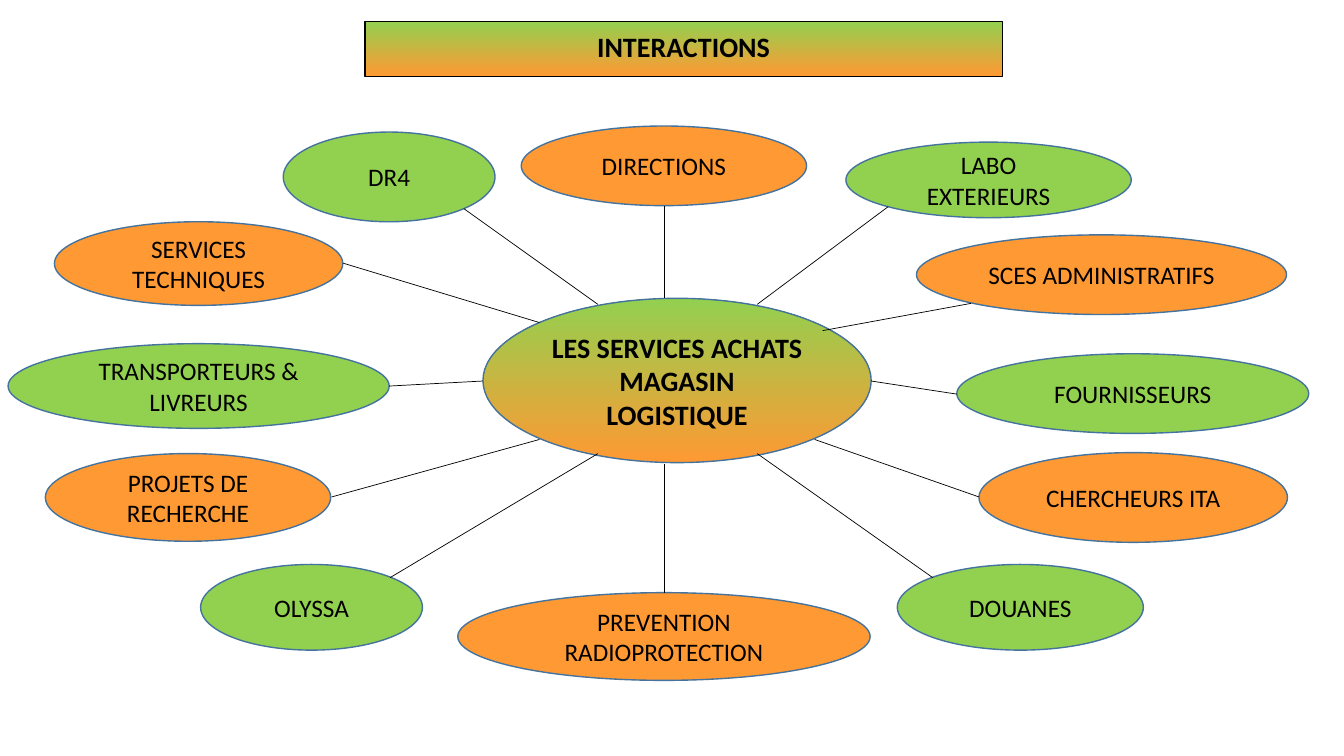
from pptx import Presentation
from pptx.dml.color import RGBColor
from pptx.enum.shapes import MSO_CONNECTOR, MSO_SHAPE
from pptx.enum.text import MSO_ANCHOR, PP_ALIGN
from pptx.util import Inches, Pt

OVAL, RECT = MSO_SHAPE.OVAL, MSO_SHAPE.RECTANGLE
STRAIGHT = MSO_CONNECTOR.STRAIGHT
MIDDLE, CENTER = MSO_ANCHOR.MIDDLE, PP_ALIGN.CENTER

FONT = "Calibri"
ORANGE, GREEN, BLUE, BLACK = "FF9933", "92D050", "43739E", "000000"
BLEND = (ORANGE, GREEN)

TITLE = ("INTERACTIONS", (3.62, 0.21, 6.32, 0.55))
HUB = ("LES SERVICES ACHATS MAGASIN LOGISTIQUE", (4.79, 2.96, 3.85, 1.63))
PARTNERS = [
    ("SERVICES TECHNIQUES", ORANGE, (0.54, 2.2, 2.86, 0.83), (3.4, 2.61), (5.35, 3.2)),
    ("SCES ADMINISTRATIFS", ORANGE, (9.09, 2.33, 3.67, 0.79), (9.63, 3.01), (8.16, 3.28)),
    ("DIRECTIONS", ORANGE, (5.17, 1.25, 2.83, 0.79), (6.59, 2.04), (6.59, 2.96)),
    ("CHERCHEURS ITA", ORANGE, (9.71, 4.49, 3.06, 0.89), (9.71, 4.93), (8.08, 4.36)),
    ("PROJETS DE RECHERCHE", ORANGE, (0.45, 4.5, 2.83, 0.87), (3.29, 4.93), (5.35, 4.36)),
    ("PREVENTION RADIOPROTECTION", ORANGE, (4.54, 5.88, 4.09, 0.87), (6.59, 5.88), (6.59, 4.6)),
    ("TRANSPORTEURS & LIVREURS", GREEN, (0.08, 3.41, 3.78, 0.84), (3.86, 3.83), (4.79, 3.78)),
    ("LABO EXTERIEURS", GREEN, (8.39, 1.41, 2.83, 0.75), (8.81, 2.05), (7.51, 3.02)),
    ("DR4", GREEN, (2.81, 1.31, 2.1, 0.89), (4.6, 2.07), (5.93, 3.02)),
    ("DOUANES", GREEN, (8.9, 5.6, 2.44, 0.85), (9.25, 5.73), (7.51, 4.5)),
    ("FOURNISSEURS", GREEN, (9.49, 3.51, 3.49, 0.79), (9.49, 3.91), (8.64, 3.78)),
    ("OLYSSA", GREEN, (1.99, 5.6, 2.2, 0.85), (3.87, 5.73), (5.93, 4.5)),
]


def rgb(value):
    return RGBColor.from_string(value)


def add_label(s, kind, text, box, colors, line, width, size, bold=False):
    sp = s.shapes.add_shape(kind, *map(Inches, box))
    sp.shadow.inherit = False
    if len(colors) > 1:
        sp.fill.gradient()
        sp.fill.gradient_angle = 90
        for stop, color in zip(sp.fill.gradient_stops, colors):
            stop.color.rgb = rgb(color)
    else:
        sp.fill.solid()
        sp.fill.fore_color.rgb = rgb(colors[0])
    sp.line.color.rgb = rgb(line)
    sp.line.width = Pt(width)
    tf = sp.text_frame
    tf.word_wrap = True
    tf.vertical_anchor = MIDDLE
    p = tf.paragraphs[0]
    p.alignment = CENTER
    r = p.add_run()
    r.text = text
    r.font.name = FONT
    r.font.size = Pt(size)
    r.font.bold = bold
    r.font.color.rgb = rgb(BLACK)
    return sp


def add_link(s, start, end):
    c = s.shapes.add_connector(STRAIGHT, *map(Inches, start + end))
    c.line.color.rgb = rgb(BLACK)
    c.line.width = Pt(0.5)
    c._element.spPr.get_or_add_ln().addnext(
        c._element.spPr.makeelement(
            "{http://schemas.openxmlformats.org/drawingml/2006/main}effectLst", {}))


def main():
    prs = Presentation()
    prs.slide_width, prs.slide_height = Inches(13.33), Inches(7.5)
    s = prs.slides.add_slide(prs.slide_layouts[6])

    add_label(s, OVAL, *HUB, BLEND, BLUE, 1, 20, True)
    title = add_label(s, RECT, *TITLE, BLEND, BLACK, 0.75, 20, True)
    title.text_frame.paragraphs[0].line_spacing = 0.9
    for text, color, box, _, _ in PARTNERS:
        add_label(s, OVAL, text, box, (color,), BLUE, 1, 18)
    for _, _, _, start, end in PARTNERS:
        add_link(s, start, end)

    prs.save("out.pptx")


if __name__ == "__main__":
    main()
